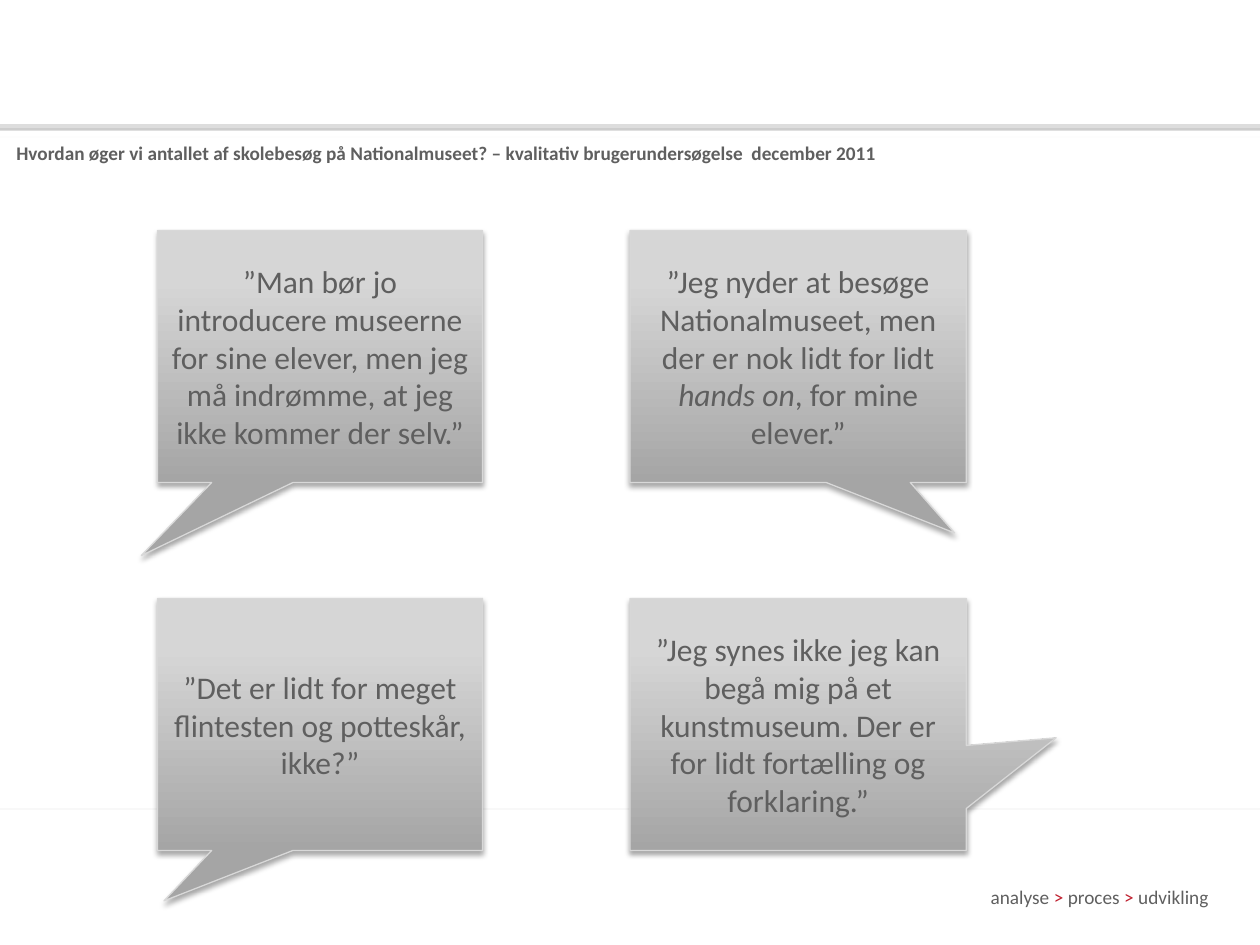
from dataclasses import dataclass
from typing import Optional

from lxml.etree import SubElement
from pptx import Presentation
from pptx.dml.color import RGBColor
from pptx.enum.shapes import MSO_CONNECTOR, MSO_SHAPE
from pptx.enum.text import MSO_ANCHOR, PP_ALIGN
from pptx.oxml import parse_xml
from pptx.oxml.ns import nsdecls, qn
from pptx.util import Inches, Pt

WIDTH, HEIGHT = 10, 7.5
FONT = "Calibri"
COLORS = {
    "white": "FFFFFF", "text": "5F5F5F", "accent": "BF1E2D",
    "faint": "F8F8F8", "rule": "DDDDDD", "rule_shadow": "808080",
    "edge": "D8D8D8", "shadow": "000000",
    "dark": "A5A5A5", "light": "D6D6D6", "lightest": "D7D7D7",
}
# Callout grid: left edge and width per column, top edge per row
COLUMNS = [(1.25, 2.58), (5, 2.67)]
ROWS = [1.83, 4.75]
CALLOUT_HEIGHT = 2


@dataclass(frozen=True)
class Run:
    text: str
    color: str = "text"
    italic: bool = False
    bold: bool = False


@dataclass(frozen=True)
class Shadow:
    color: str
    opacity: int
    blur: float
    distance: float


@dataclass(frozen=True)
class Quote:
    column: int
    row: int
    tip: tuple[float, float]  # offset from the centre, as shares of the size
    runs: list[Run]


@dataclass(frozen=True)
class Rule:
    share: float  # share of the slide's height
    color: str
    weight: float
    shadow: Optional[Shadow] = None


CALLOUT_SHADOW = Shadow("shadow", 35, 3.1, 1.8)
BACK_RULES = [Rule(6.42 / HEIGHT, "faint", 1), Rule(1.09 / HEIGHT, "faint", 1)]
HEADER_RULE = Rule(1 / HEIGHT, "rule", 2, Shadow("rule_shadow", 38, 0, 1.6))
HEADER = [Run("Hvordan øger vi antallet af skolebesøg på Nationalmuseet? – "
              "kvalitativ brugerundersøgelse  december 2011", bold=True)]
FOOTER = [Run("analyse "), Run(">", "accent"), Run(" proces "),
          Run(">", "accent"), Run(" udvikling")]
QUOTES = [
    Quote(0, 0, (-0.55, 0.79), [
        Run("”Man bør jo introducere museerne for sine elever, men jeg må "
            "indrømme, at jeg ikke kommer der selv.”")]),
    Quote(1, 0, (0.465, 0.7), [
        Run("”Jeg nyder at besøge Nationalmuseet, men der er nok lidt for lidt "),
        Run("hands on", italic=True),
        Run(", for mine elever.”")]),
    Quote(0, 1, (-0.48, 0.7), [
        Run("”Det er lidt for meget flintesten og potteskår, ikke?”")]),
    Quote(1, 1, (0.767, 0.053), [
        Run("”Jeg synes ikke jeg kan begå mig på et kunstmuseum. Der er for "
            "lidt fortælling og forklaring.”")]),
]


def rgb(name: str) -> RGBColor:
    return RGBColor.from_string(COLORS[name])


def set_effects(shape, shadow: Optional[Shadow] = None) -> None:
    """Replace the theme's shadow by the given one, or by none."""
    effects = SubElement(shape._element.spPr, qn("a:effectLst"))
    if shadow:
        outer = SubElement(
            effects, qn("a:outerShdw"), blurRad=str(Pt(shadow.blur)),
            dist=str(Pt(shadow.distance)), dir="5400000", rotWithShape="0")
        color = SubElement(outer, qn("a:srgbClr"), val=COLORS[shadow.color])
        SubElement(color, qn("a:alpha"), val=str(shadow.opacity * 1000))


def write_text(frame, runs: list[Run], size: float, align, anchor) -> None:
    frame.word_wrap = True
    frame.vertical_anchor = anchor
    paragraph = frame.paragraphs[0]
    paragraph.alignment = align
    for item in runs:
        run = paragraph.add_run()
        run.text = item.text
        run.font.name = FONT
        run.font.size = Pt(size)
        run.font.bold = item.bold
        run.font.italic = item.italic
        run.font.color.rgb = rgb(item.color)


def draw_rule(slide, rule: Rule) -> None:
    y = Inches(rule.share * HEIGHT)
    line = slide.shapes.add_connector(
        MSO_CONNECTOR.STRAIGHT, 0, y, Inches(WIDTH), y)
    line.line.color.rgb = rgb(rule.color)
    line.line.width = Pt(rule.weight)
    set_effects(line, rule.shadow)


def draw_header(slide) -> None:
    band = slide.shapes.add_shape(
        MSO_SHAPE.RECTANGLE, 0, Inches(0.92), Inches(WIDTH), Inches(0.58))
    band.fill.solid()
    band.fill.fore_color.rgb = rgb("white")
    color = band._element.spPr.find(".//" + qn("a:srgbClr"))
    SubElement(color, qn("a:alpha"), val="75000")
    band.line.fill.background()
    set_effects(band)
    band.text_frame.margin_left = Inches(0.13)
    write_text(band.text_frame, HEADER, 11, PP_ALIGN.LEFT, MSO_ANCHOR.MIDDLE)


def draw_footer(slide) -> None:
    motto = slide.shapes.add_textbox(
        Inches(6.25), Inches(6.98), Inches(3.44), Inches(0.29))
    write_text(motto.text_frame, FOOTER, 11, PP_ALIGN.RIGHT, MSO_ANCHOR.TOP)


def fill_gradient(shape) -> None:
    """Dark at the bottom, light from four fifths of the way up."""
    stops = "".join(
        f'<a:gs pos="{share * 1000}"><a:srgbClr val="{COLORS[name]}"/></a:gs>'
        for share, name in [(0, "dark"), (80, "light"), (100, "lightest")])
    gradient = parse_xml(
        f'<a:gradFill rotWithShape="1" {nsdecls("a")}><a:gsLst>{stops}</a:gsLst>'
        '<a:lin ang="16200000" scaled="0"/></a:gradFill>')
    shape._element.spPr.find(qn("a:prstGeom")).addnext(gradient)


def draw_quote(slide, quote: Quote) -> None:
    left, width = COLUMNS[quote.column]
    callout = slide.shapes.add_shape(
        MSO_SHAPE.RECTANGULAR_CALLOUT, Inches(left), Inches(ROWS[quote.row]),
        Inches(width), Inches(CALLOUT_HEIGHT))
    for index, offset in enumerate(quote.tip):
        callout.adjustments[index] = offset
    fill_gradient(callout)
    callout.line.color.rgb = rgb("edge")
    callout.line.width = Pt(0.75)
    set_effects(callout, CALLOUT_SHADOW)
    write_text(callout.text_frame, quote.runs, 18,
               PP_ALIGN.CENTER, MSO_ANCHOR.MIDDLE)


def main() -> None:
    deck = Presentation()
    deck.slide_width, deck.slide_height = Inches(WIDTH), Inches(HEIGHT)
    slide = deck.slides.add_slide(deck.slide_layouts[6])

    # Frame: rules, header band and footer motto
    for rule in BACK_RULES:
        draw_rule(slide, rule)
    draw_header(slide)
    draw_rule(slide, HEADER_RULE)
    draw_footer(slide)

    # Teachers' quotes
    for quote in QUOTES:
        draw_quote(slide, quote)

    deck.save("out.pptx")


if __name__ == "__main__":
    main()
